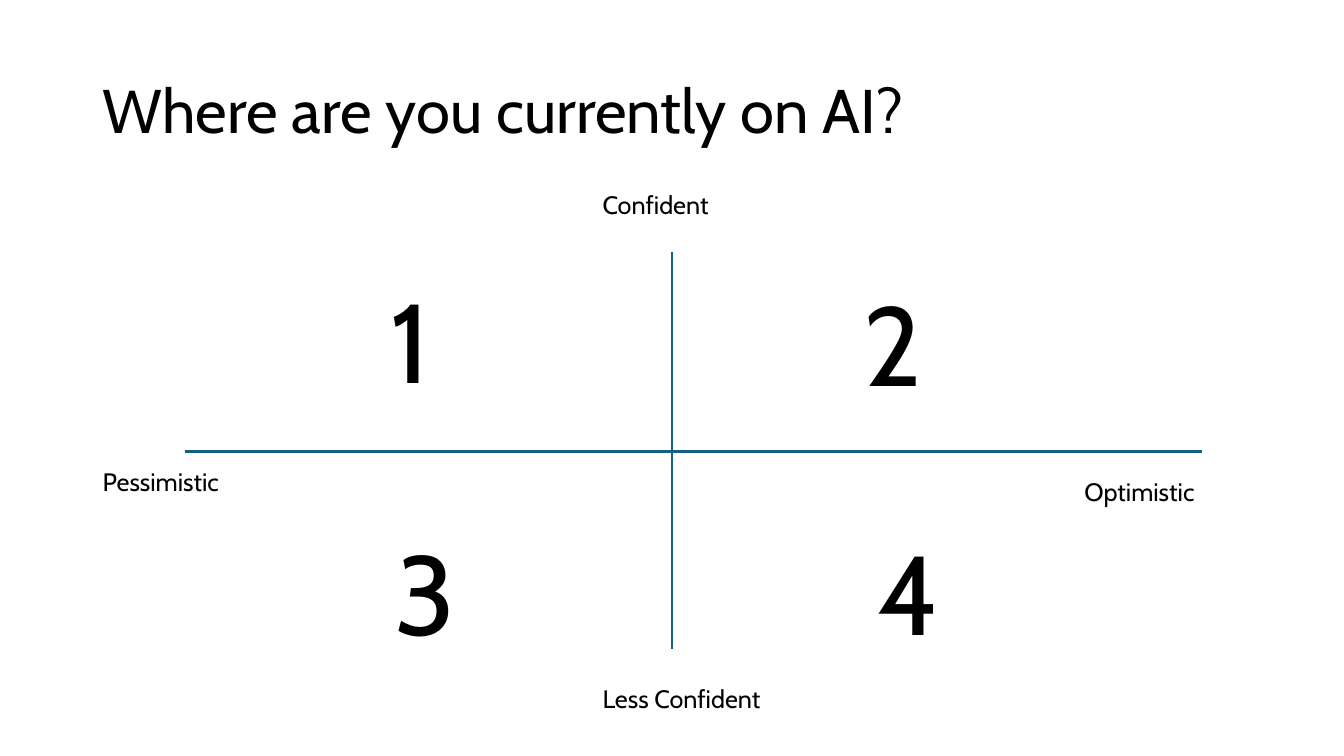
from dataclasses import dataclass

from pptx import Presentation
from pptx.dml.color import RGBColor
from pptx.enum.shapes import MSO_CONNECTOR
from pptx.enum.text import MSO_ANCHOR, MSO_AUTO_SIZE
from pptx.oxml.ns import qn
from pptx.util import Inches, Pt

STRAIGHT = MSO_CONNECTOR.STRAIGHT
TOP, MIDDLE = MSO_ANCHOR.TOP, MSO_ANCHOR.MIDDLE
GROW, FIXED = MSO_AUTO_SIZE.SHAPE_TO_FIT_TEXT, MSO_AUTO_SIZE.NONE


@dataclass(frozen=True)
class Theme:
    font: str = "Cabin"
    ink: RGBColor = RGBColor(0x00, 0x00, 0x00)
    axis: RGBColor = RGBColor(0x15, 0x60, 0x82)
    title: int = 44
    label: int = 18
    number: int = 80
    axis_width: float = 1.5


class Deck:
    """Places elements by percent of the slide's width and height."""

    def __init__(self, theme):
        self.theme = theme
        self.prs = Presentation()
        self.prs.slide_width, self.prs.slide_height = Inches(13.33), Inches(7.5)
        self.s = self.prs.slides.add_slide(self.prs.slide_layouts[6])

    def x(self, share):
        return round(self.prs.slide_width * share / 100)

    def y(self, share):
        return round(self.prs.slide_height * share / 100)

    def text(self, text, left, top, width, height, size, anchor=TOP, fit=GROW, spacing=None):
        box = self.s.shapes.add_textbox(self.x(left), self.y(top), self.x(width), self.y(height))
        tf = box.text_frame
        tf.word_wrap, tf.auto_size, tf.vertical_anchor = True, fit, anchor
        p = tf.paragraphs[0]
        p.line_spacing = spacing
        r = p.add_run()
        r.text = text
        r.font.name, r.font.size = self.theme.font, Pt(size)
        r.font.color.rgb = self.theme.ink

    def title(self, text):
        self.text(text, 6.9, 5.33, 86.25, 19.33, self.theme.title, MIDDLE, FIXED, 0.9)

    def label(self, text, left, top, width):
        self.text(text, left, top, width, 5.33, self.theme.label)

    def number(self, text, left, top):
        self.text(text, left, top, 7.05, 19.33, self.theme.number)

    def axis(self, x1, y1, x2, y2):
        line = self.s.shapes.add_connector(STRAIGHT, self.x(x1), self.y(y1), self.x(x2), self.y(y2))
        line.line.color.rgb = self.theme.axis
        line.line.width = Pt(self.theme.axis_width)
        sp_pr = line._element.spPr
        sp_pr.append(sp_pr.makeelement(qn("a:effectLst"), {}))


def main():
    deck = Deck(Theme())
    deck.title("Where are you currently on AI?")

    # Axes
    deck.axis(50, 33.33, 50, 85.87)
    deck.axis(13.8, 59.73, 89.4, 59.73)

    # Axis ends
    for text, left, top, width in (
        ("Confident", 44.1, 24.4, 19.6),
        ("Less Confident", 44.1, 89.73, 19.6),
        ("Optimistic", 79.95, 62.4, 15.15),
        ("Pessimistic", 6.9, 61.07, 15.15),
    ):
        deck.label(text, left, top, width)

    # Quadrant numbers
    for text, left, top in (
        ("1", 28.35, 35.2),
        ("2", 63.53, 35.6),
        ("3", 28.65, 68.53),
        ("4", 64.58, 68.53),
    ):
        deck.number(text, left, top)

    deck.prs.save("out.pptx")


if __name__ == "__main__":
    main()
